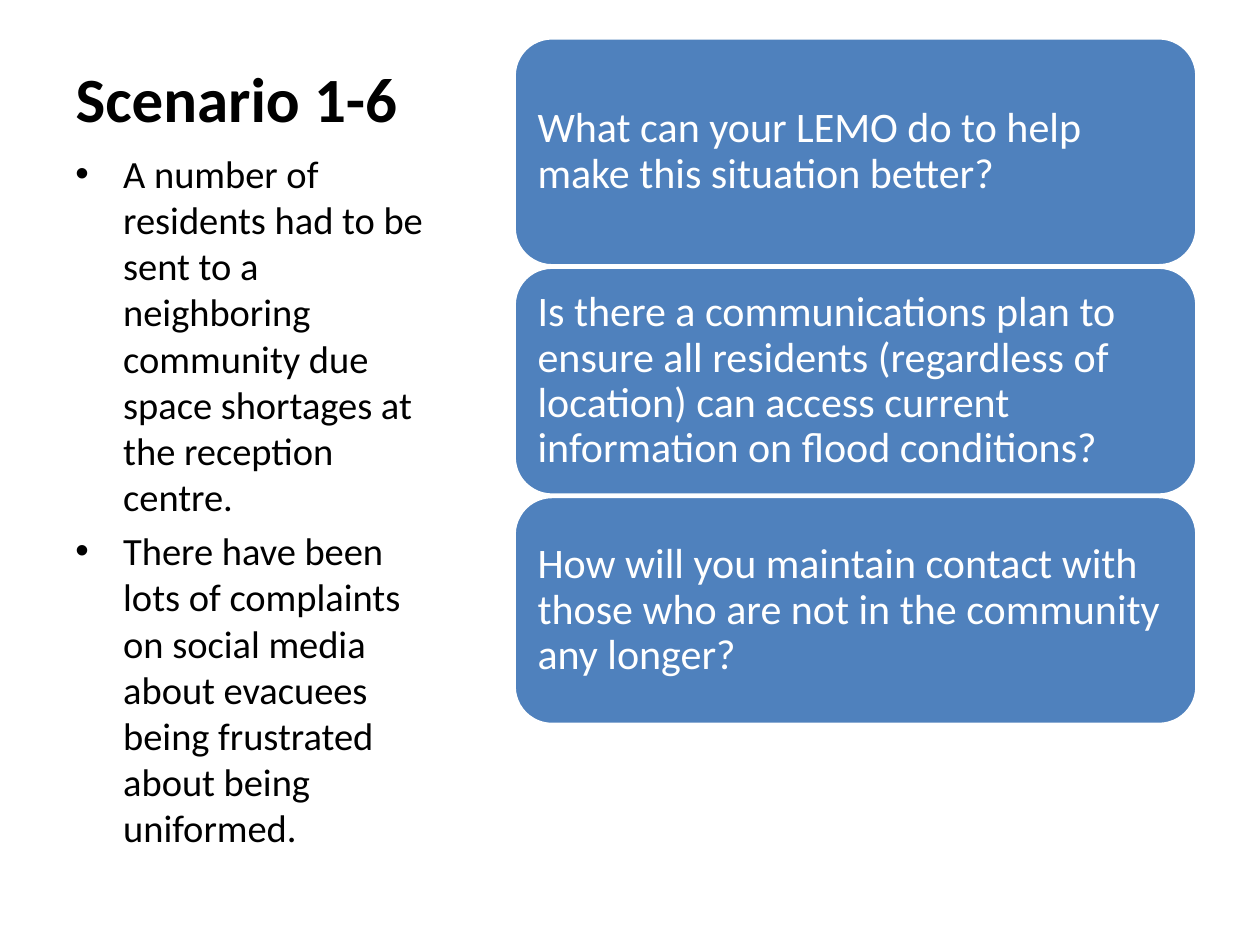
from lxml import etree
from pptx import Presentation
from pptx.dml.color import RGBColor
from pptx.enum.shapes import MSO_SHAPE
from pptx.enum.text import MSO_ANCHOR, MSO_AUTO_SIZE, PP_ALIGN
from pptx.oxml.ns import qn
from pptx.util import Inches, Pt


def color(hex_string):
    return RGBColor.from_string(hex_string)


def format_paragraph(paragraph, size, hex_string, bold=False):
    paragraph.alignment = PP_ALIGN.LEFT
    for run in paragraph.runs:
        run.font.name = "Calibri"
        run.font.size = Pt(size)
        run.font.bold = bold
        run.font.color.rgb = color(hex_string)


presentation = Presentation()
presentation.slide_width = Inches(10)
presentation.slide_height = Inches(7.5)
slide = presentation.slides.add_slide(presentation.slide_layouts[5])

# Title
title = slide.shapes.title
title.left, title.top = Inches(0.5), Inches(0.3)
title.width, title.height = Inches(3.29), Inches(1.27)
title_frame = title.text_frame
title_frame.text = "Scenario 1-6"
title_frame.auto_size = MSO_AUTO_SIZE.NONE
title_frame.vertical_anchor = MSO_ANCHOR.BOTTOM
title_frame.margin_bottom = Inches(0.5)
format_paragraph(title_frame.paragraphs[0], 36, "000000", bold=True)

# Scenario bullets
scenario_points = [
    "A number of residents had to be sent to a neighboring community due "
    "space shortages at the reception centre.",
    "There have been lots of complaints on social media about evacuees "
    "being frustrated about being uniformed.",
]
body = slide.shapes.add_textbox(Inches(0.5), Inches(1.14), Inches(3), Inches(4.77))
body_frame = body.text_frame
body_frame.word_wrap = True
body_frame.text = "\n".join(scenario_points)
for index, paragraph in enumerate(body_frame.paragraphs):
    properties = paragraph._p.get_or_add_pPr()
    properties.set("marL", str(Inches(0.38)))
    properties.set("indent", str(Inches(-0.38)))
    etree.SubElement(properties, qn("a:buFont")).set("typeface", "Arial")
    etree.SubElement(properties, qn("a:buChar")).set("char", "•")
    if index > 0:
        paragraph.space_before = Pt(4.5)
    format_paragraph(paragraph, 22, "000000")

# Question cards
questions = [
    "What can your LEMO do to help make this situation better?",
    "Is there a communications plan to ensure all residents (regardless of "
    "location) can access current information on flood conditions?",
    "How will you maintain contact with those who are not in the community "
    "any longer?",
]
card_top, card_pitch = 0.3, 1.82
for index, question in enumerate(questions):
    card = slide.shapes.add_shape(
        MSO_SHAPE.ROUNDED_RECTANGLE,
        Inches(4.08), Inches(card_top + index * card_pitch),
        Inches(5.42), Inches(1.81),
    )
    card.shadow.inherit = False
    card.fill.solid()
    card.fill.fore_color.rgb = color("4F81BD")
    card.line.color.rgb = color("FFFFFF")
    card.line.width = Pt(2)
    card_frame = card.text_frame
    card_frame.word_wrap = True
    card_frame.vertical_anchor = MSO_ANCHOR.MIDDLE
    # The rounded corners inset the text by a further 0.09 inch
    card_frame.margin_left = card_frame.margin_right = Inches(0.1)
    card_frame.text = question
    paragraph = card_frame.paragraphs[0]
    paragraph.line_spacing = 0.9
    format_paragraph(paragraph, 24, "FFFFFF")

presentation.save("out.pptx")
